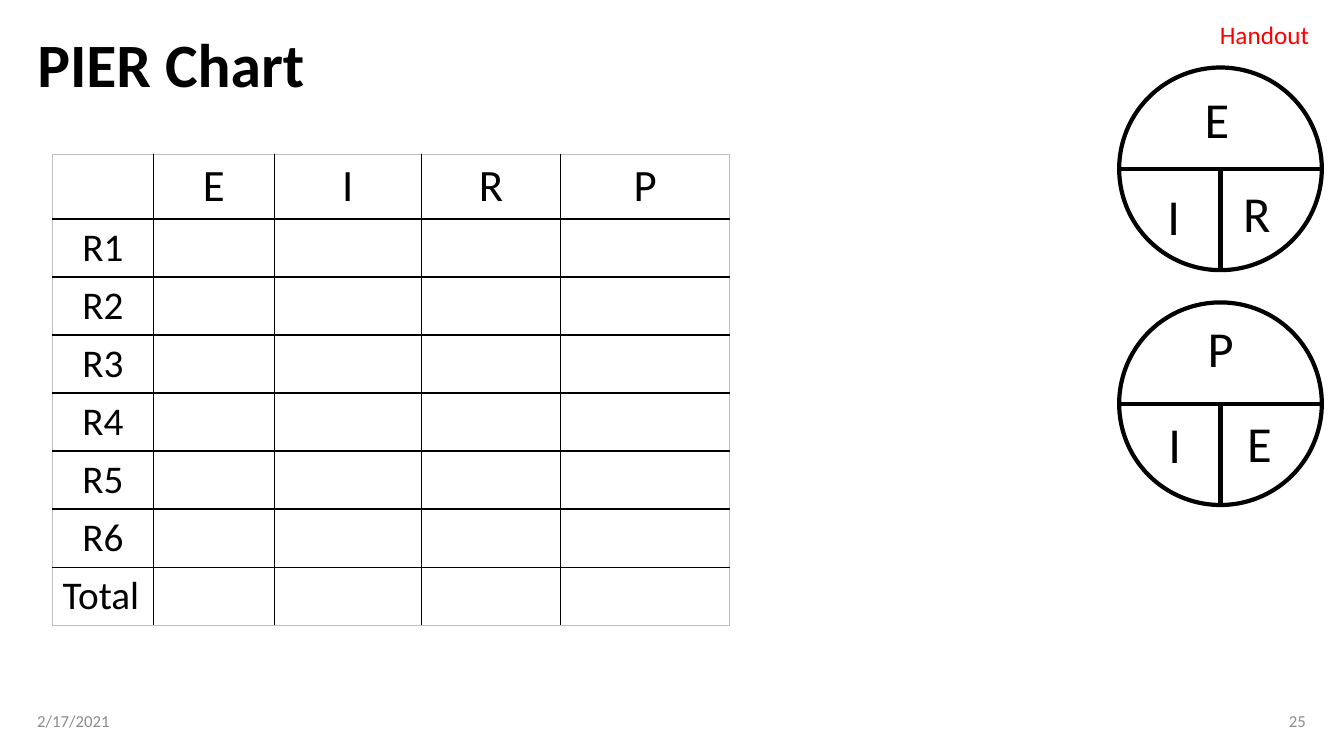
import pptx
import pptx.dml.color
import pptx.enum.shapes
import pptx.enum.text
import pptx.oxml
import pptx.oxml.ns
import pptx.util
from pptx.util import Inches

Pt = pptx.util.Pt
RGBColor = pptx.dml.color.RGBColor
ALIGN = pptx.enum.text.PP_ALIGN
ANCHOR = pptx.enum.text.MSO_ANCHOR

BLACK = RGBColor(0x00, 0x00, 0x00)
WHITE = RGBColor(0xFF, 0xFF, 0xFF)
RED = RGBColor(0xFF, 0x00, 0x00)
GREY = RGBColor(0x8C, 0x8C, 0x8C)
EDGE_GREY = RGBColor(0xBF, 0xBF, 0xBF)
FONT = "Calibri"

# Content
TITLE = "PIER Chart"
HEADERS = ["", "E", "I", "R", "P"]
ROW_LABELS = ["R1", "R2", "R3", "R4", "R5", "R6", "Total"]
COLUMN_WIDTHS = [1, 1.2, 1.46, 1.38, 1.68]
HEADER_HEIGHT, ROW_HEIGHT = 0.64, 0.57
TABLE_LEFT, TABLE_TOP = 0.52, 1.53

# Each circle: its top, then letters with left, top and width
CIRCLE_LEFT, DIAMETER = 11.1, 2.01
CIRCLES = [
    (0.67, [("E", 11.85, 0.82, 0.45), ("I", 11.48, 1.79, 0.33), ("R", 12.23, 1.76, 0.48)]),
    (3.0, [("P", 11.88, 3.1, 0.46), ("I", 11.49, 4.05, 0.33), ("E", 12.27, 4.04, 0.45)]),
]
# Text, box, format
LABELS = [
    ("2/17/2021", (0.27, 6.95, 3.65, 0.4), dict(size=12, color=GREY, anchor=ANCHOR.MIDDLE)),
    ("25", (9.42, 6.95, 3.63, 0.4),
     dict(size=12, color=GREY, anchor=ANCHOR.MIDDLE, align=ALIGN.RIGHT)),
    ("Handout", (12, 0.14, 1.1, 0.4), dict(size=18, color=RED, wrap=False)),
]


def write(frame, text, size=18, color=BLACK, bold=False, align=ALIGN.LEFT,
          anchor=ANCHOR.TOP, wrap=True, spacing=None):
    frame.word_wrap = wrap
    frame.vertical_anchor = anchor
    para = frame.paragraphs[0]
    para.alignment = align
    if spacing:
        para.line_spacing = spacing
    span = para.add_run()
    span.text = text
    span.font.name = FONT
    span.font.size = Pt(size)
    span.font.bold = bold
    span.font.color.rgb = color


def add_label(shapes, text, box, **style):
    label = shapes.add_textbox(*map(Inches, box))
    write(label.text_frame, text, **style)


def add_line(shapes, start, end):
    line = shapes.add_connector(pptx.enum.shapes.MSO_CONNECTOR.STRAIGHT,
                                *map(Inches, start + end))
    line.line.color.rgb = BLACK
    line.line.width = Pt(3)
    properties = line._element.spPr
    properties.append(properties.makeelement(pptx.oxml.ns.qn("a:effectLst"), {}))


def set_border(cell, side, color, width):
    border = pptx.oxml.parse_xml(
        f'<a:{side} {pptx.oxml.ns.nsdecls("a")} w="{Pt(width)}"><a:solidFill>'
        f'<a:srgbClr val="{color}"/></a:solidFill></a:{side}>')
    properties = cell._tc.get_or_add_tcPr()
    # Borders come before the fill
    position = sum(child.tag.split("}")[1].startswith("ln") for child in properties)
    properties.insert(position, border)


def add_pier_table(page):
    rows = [HEADERS] + [[label] + [""] * (len(HEADERS) - 1) for label in ROW_LABELS]
    last_row, last_column = len(rows) - 1, len(HEADERS) - 1
    heights = [HEADER_HEIGHT] + [ROW_HEIGHT] * last_row
    table = page.shapes.add_table(
        len(rows), len(HEADERS), Inches(TABLE_LEFT), Inches(TABLE_TOP),
        Inches(sum(COLUMN_WIDTHS)), Inches(sum(heights))).table
    table.first_row = table.horz_banding = False
    for column, width in zip(table.columns, COLUMN_WIDTHS):
        column.width = Inches(width)

    def rule(index, last, width):
        return (EDGE_GREY, 0.75) if index in (0, last + 1) else (BLACK, width)

    def row_rule(index):
        return rule(index, last_row, 1 if index == last_row else 1.5)

    for r, values in enumerate(rows):
        table.rows[r].height = Inches(heights[r])
        for c, text in enumerate(values):
            cell = table.cell(r, c)
            cell.fill.solid()
            cell.fill.fore_color.rgb = WHITE
            cell.vertical_anchor = ANCHOR.MIDDLE
            if text:
                write(cell.text_frame, text, size=28 if r else 32,
                      align=ALIGN.LEFT if text == "Total" else ALIGN.CENTER,
                      anchor=None)
            set_border(cell, "lnL", *rule(c, last_column, 1))
            set_border(cell, "lnR", *rule(c + 1, last_column, 1))
            set_border(cell, "lnT", *row_rule(r))
            set_border(cell, "lnB", *row_rule(r + 1))


def add_circle(page, top, letters):
    shapes = page.shapes.add_group_shape().shapes
    circle = shapes.add_shape(pptx.enum.shapes.MSO_SHAPE.OVAL, Inches(CIRCLE_LEFT),
                              Inches(top), Inches(DIAMETER), Inches(DIAMETER))
    circle.shadow.inherit = False
    circle.fill.background()
    circle.line.color.rgb = BLACK
    circle.line.width = Pt(3)
    middle, center = top + DIAMETER / 2, CIRCLE_LEFT + DIAMETER / 2
    add_line(shapes, (CIRCLE_LEFT, middle), (CIRCLE_LEFT + DIAMETER, middle))
    add_line(shapes, (center, top + DIAMETER), (center, middle))
    for letter, left, letter_top, width in letters:
        add_label(shapes, letter, (left, letter_top, width, 0.71), size=36, wrap=False)


def main():
    deck = pptx.Presentation()
    deck.slide_width, deck.slide_height = Inches(13.33), Inches(7.5)
    page = deck.slides.add_slide(deck.slide_layouts[5])

    # Title
    title = page.shapes.title
    title.left, title.top, title.width, title.height = map(Inches, (0.27, 0.27, 12.79, 0.8))
    write(title.text_frame, TITLE, size=44, bold=True, anchor=ANCHOR.MIDDLE, spacing=0.9)

    # Table, circles and small labels
    add_pier_table(page)
    for top, letters in CIRCLES:
        add_circle(page, top, letters)
    for text, box, style in LABELS:
        add_label(page.shapes, text, box, **style)

    deck.save("out.pptx")


if __name__ == "__main__":
    main()
